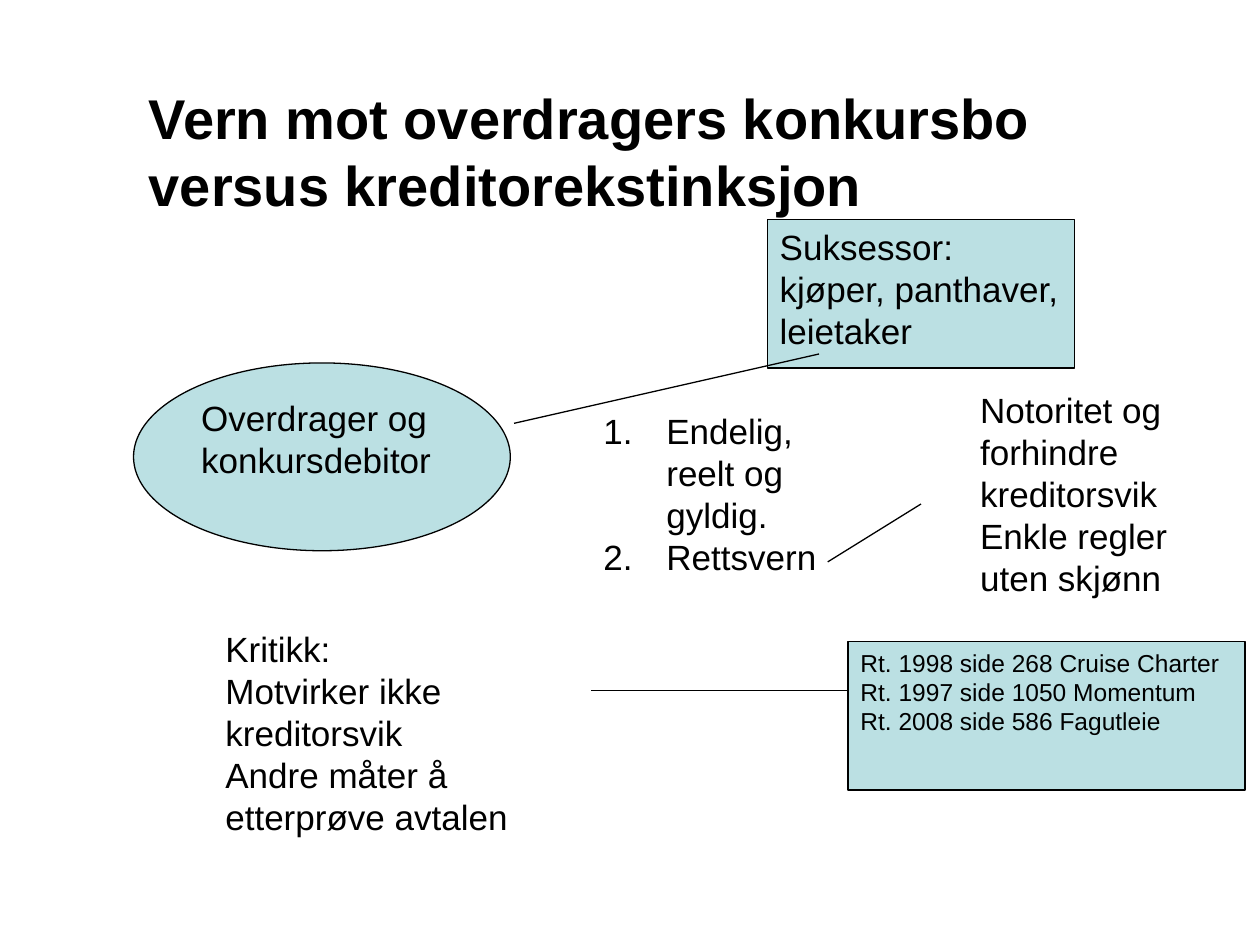
from lxml.etree import SubElement
from pptx import Presentation
from pptx.dml.color import RGBColor
from pptx.enum.shapes import MSO_CONNECTOR as Connector, MSO_SHAPE as Shape
from pptx.enum.text import MSO_ANCHOR as Anchor, PP_ALIGN as Align
from pptx.oxml.ns import qn
from pptx.util import Pt

INK, TEAL = "000000", "BBE0E3"
TITLE = "Vern mot overdragers konkursbo versus kreditorekstinksjon"
TITLE_PLACE = (77.8, 54.7, 606.2, 62.6)
SHAPES = [
    (Shape.OVAL, (76.3, 207.4, 215.3, 107.3), 20, ["Overdrager og konkursdebitor"]),
    (Shape.RECTANGLE, (438.5, 125.3, 175.7, 85), 20,
     ["Suksessor: kjøper, panthaver, leietaker"]),
    (Shape.RECTANGLE, (484.6, 366.5, 226.8, 85), 14,
     ["Rt. 1998 side 268 Cruise Charter", "Rt. 1997 side 1050 Momentum",
      "Rt. 2008 side 586 Fagutleie"]),
]
NOTES = [
    ((337.7, 230.4, 164.2, 104.4), True, ["Endelig, reelt og gyldig.", "Rettsvern"]),
    ((553, 218.2, 124.6, 128.2), False,
     ["Notoritet og forhindre kreditorsvik", "Enkle regler uten skjønn"]),
    ((121.7, 355, 193, 128.2), False,
     ["Kritikk:", "Motvirker ikke kreditorsvik", "Andre måter å etterprøve avtalen"]),
]
LINES = [
    (293.8, 241.9, 468, 202.3),
    (473, 321.1, 526.3, 288),
    (484.6, 394.6, 337.7, 394.6),
]


def color(value):
    return RGBColor.from_string(value)


def points(values):
    return [Pt(value) for value in values]


def outline(line):
    line.color.rgb = color(INK)
    line.width = Pt(0.75)


def write(box, texts, size, anchor=Anchor.TOP, bold=False, numbered=False):
    frame = box.text_frame
    frame.word_wrap = True
    frame.vertical_anchor = anchor
    frame.text = "\n".join(texts)
    for para in frame.paragraphs:
        para.alignment = Align.LEFT
        if numbered:
            props = para._p.get_or_add_pPr()
            props.set("marL", str(Pt(36)))
            props.set("indent", str(-Pt(36)))
            SubElement(props, qn("a:buFont"), typeface="Arial")
            SubElement(props, qn("a:buAutoNum"), type="arabicPeriod")
        para.font.name = "Arial"
        para.font.size = Pt(size)
        para.font.bold = bold
        para.font.color.rgb = color(INK)


def main():
    """Build the slide on protection against the transferor's bankruptcy estate."""
    deck = Presentation()
    deck.slide_width, deck.slide_height = Pt(720), Pt(540)
    page = deck.slides.add_slide(deck.slide_layouts[5])
    title = page.shapes.title
    title.left, title.top, title.width, title.height = points(TITLE_PLACE)
    write(title, [TITLE], 32, Anchor.MIDDLE, bold=True)

    for kind, place, size, texts in SHAPES:
        shape = page.shapes.add_shape(kind, *points(place))
        shape.shadow.inherit = False
        shape.fill.solid()
        shape.fill.fore_color.rgb = color(TEAL)
        outline(shape.line)
        write(shape, texts, size)

    for place, numbered, texts in NOTES:
        write(page.shapes.add_textbox(*points(place)), texts, 20, numbered=numbered)

    for ends in LINES:
        link = page.shapes.add_connector(Connector.STRAIGHT, *points(ends))
        SubElement(link._element.spPr, qn("a:effectLst"))
        outline(link.line)

    deck.save("out.pptx")


if __name__ == "__main__":
    main()
